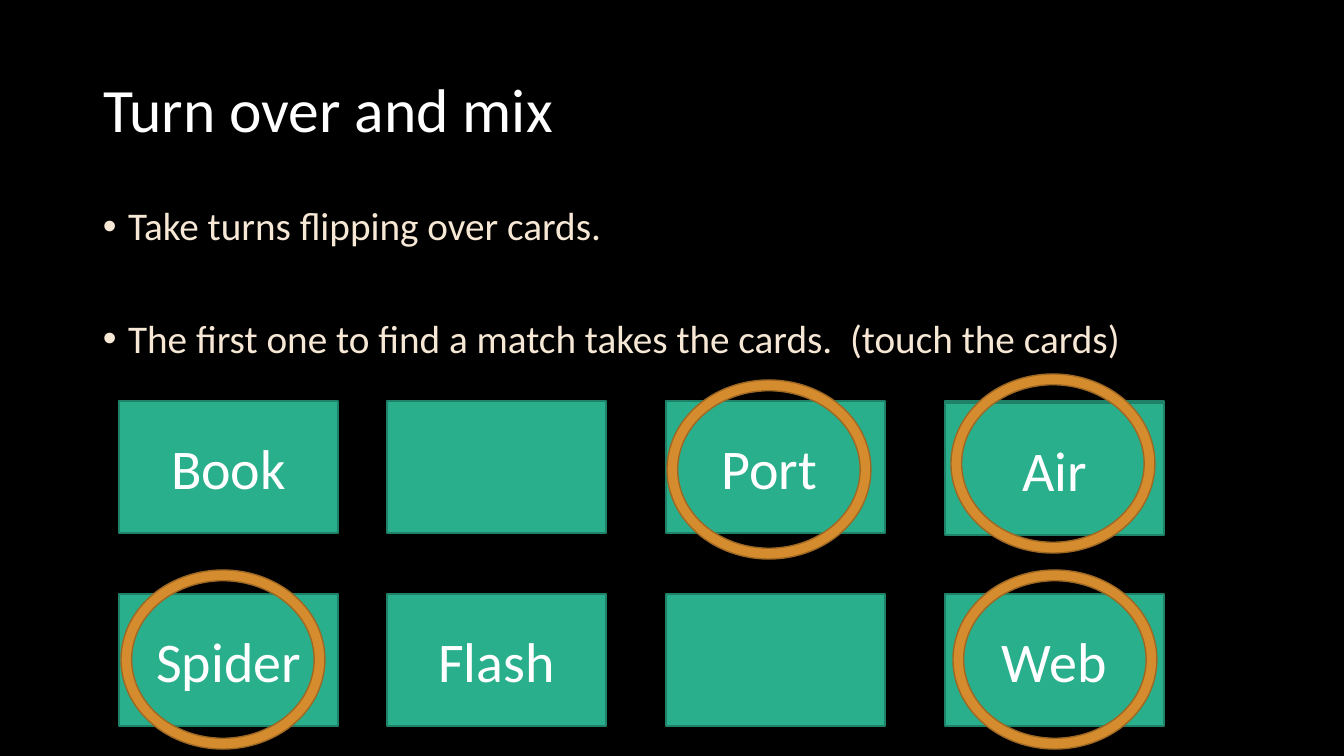
from lxml import etree
from pptx import Presentation
from pptx.dml.color import RGBColor
from pptx.enum.shapes import MSO_SHAPE
from pptx.enum.text import MSO_ANCHOR, PP_ALIGN
from pptx.oxml.ns import qn
from pptx.util import Pt

RECT, DONUT = MSO_SHAPE.RECTANGLE, MSO_SHAPE.DONUT
MID, TOP = MSO_ANCHOR.MIDDLE, MSO_ANCHOR.TOP
LEFT, MIDST = PP_ALIGN.LEFT, PP_ALIGN.CENTER

TITLE = "Turn over and mix"
RULES = [
    "Take turns flipping over cards.",
    "The first one to find a match takes the cards.  (touch the cards)",
]
CARDS = [
    ["Book", "", "Port ", ""],
    ["Spider", "Flash", "", "Web"],
]
COLS = [119, 387, 666, 945]
ROWS = [401, 594]
CARD = (219, 132)
AIR = ("Air", 945, 403)
RINGS = [(121, 570), (953, 570), (667, 380), (951, 374)]
RING = (204, 179)
GREEN = ("29AF8C", "1E8168")
AMBER = ("D58C2E", "9E6822")

PX = 914400 / 100.8


def px(*nums):
    return [round(n * PX) for n in nums]


def color(code):
    return RGBColor.from_string(code)


def write(frame, *lines, size=40, ink="FFFFFF", align=MIDST, anchor=MID,
          lead=1.0, before=0, gap=0, bullet=False):
    frame.word_wrap = True
    frame.vertical_anchor = anchor
    for i, line in enumerate(lines):
        para = frame.add_paragraph() if i else frame.paragraphs[0]
        para.alignment = align
        para.line_spacing = lead
        para.space_before = Pt(gap if i else before)
        run = para.add_run()
        run.text = line
        run.font.size = Pt(size)
        run.font.name = "Calibri"
        run.font.color.rgb = color(ink)
        if bullet:
            props = para._p.get_or_add_pPr()
            props.set("marL", "228600")
            props.set("indent", "-228600")
            etree.SubElement(props, qn("a:buFont")).set("typeface", "Arial")
            etree.SubElement(props, qn("a:buChar")).set("char", "•")


def draw(slide, kind, spot, size, paint):
    shape = slide.shapes.add_shape(kind, *px(*spot, *size))
    shape.shadow.inherit = False
    shape.fill.solid()
    shape.fill.fore_color.rgb = color(paint[0])
    shape.line.color.rgb = color(paint[1])
    shape.line.width = Pt(1)
    return shape


def card(slide, text, x, y):
    shape = draw(slide, RECT, (x, y), CARD, GREEN)
    if text:
        write(shape.text_frame, text)


def main():
    deck = Presentation()
    deck.slide_width, deck.slide_height = px(1344, 756)
    slide = deck.slides.add_slide(deck.slide_layouts[5])
    slide.background.fill.solid()
    slide.background.fill.fore_color.rgb = color("000000")

    title = slide.shapes.title
    title.left, title.top, title.width, title.height = px(93, 40, 1159, 146)
    write(title.text_frame, TITLE, size=44, align=LEFT, lead=0.9)

    body = slide.shapes.add_textbox(*px(93, 202, 1159, 480))
    write(body.text_frame, *RULES, size=28, ink="F7E8D5", align=LEFT,
          anchor=TOP, lead=0.9, before=10, gap=50, bullet=True)

    for y, words in zip(ROWS, CARDS):
        for x, word in zip(COLS, words):
            card(slide, word, x, y)
    card(slide, *AIR)

    for spot in RINGS:
        ring = draw(slide, DONUT, spot, RING, AMBER)
        ring.adjustments[0] = 0.06

    deck.save("out.pptx")


if __name__ == "__main__":
    main()
